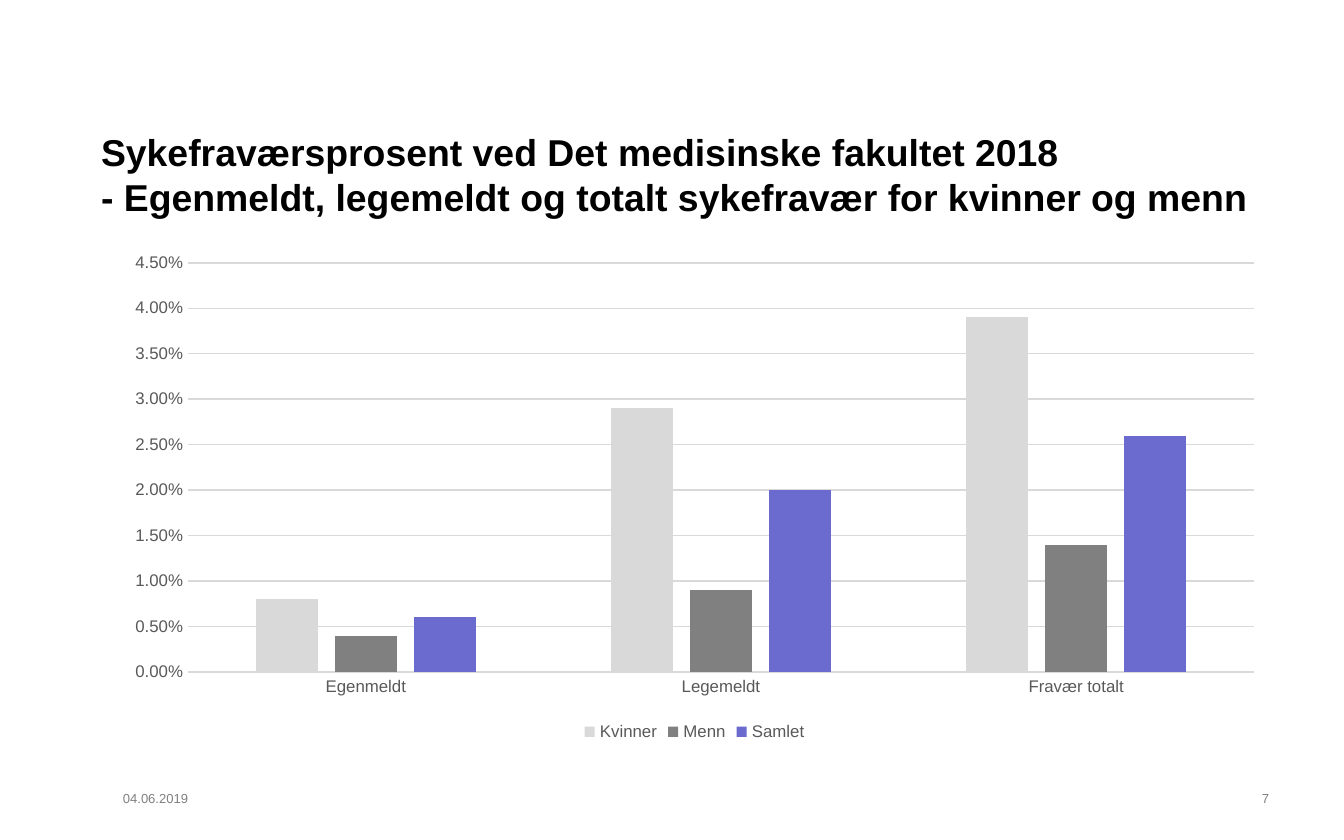
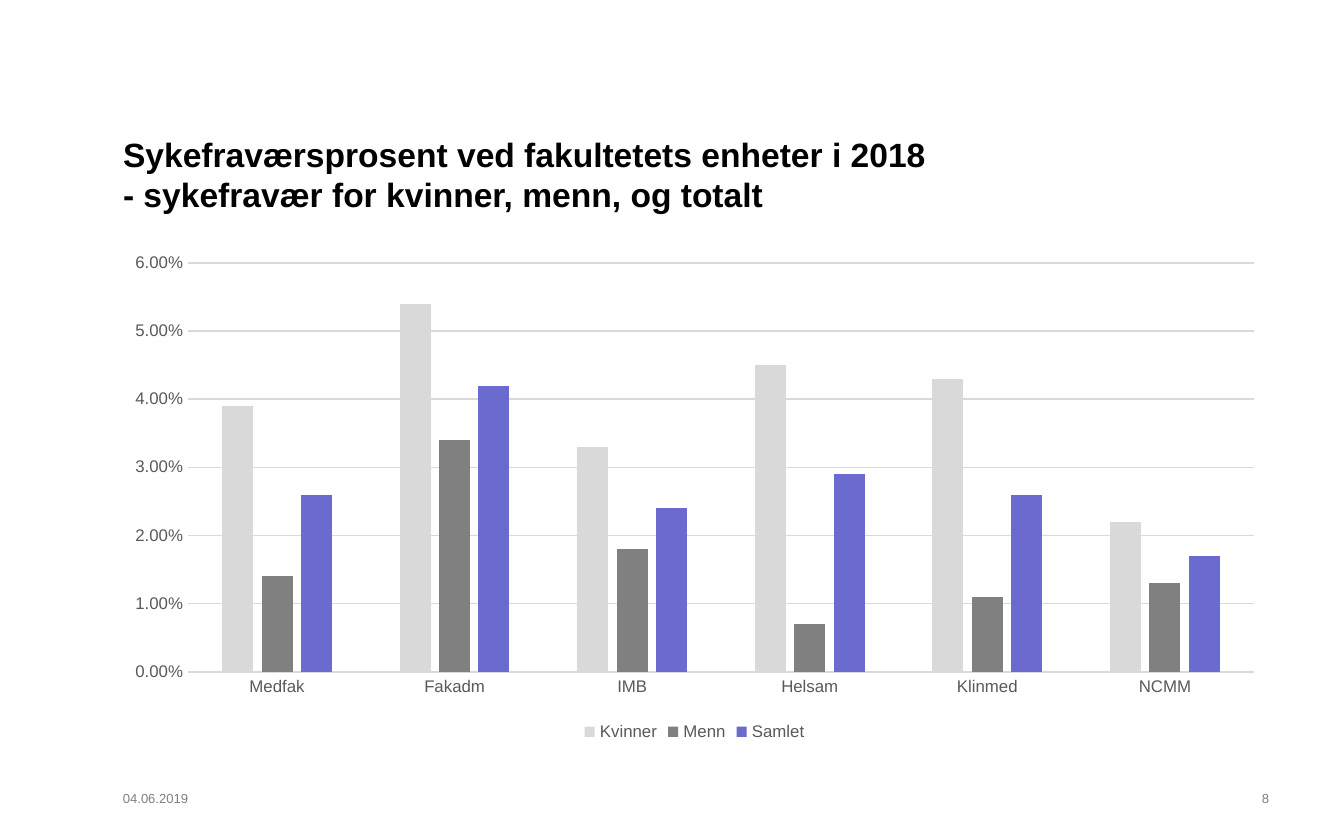
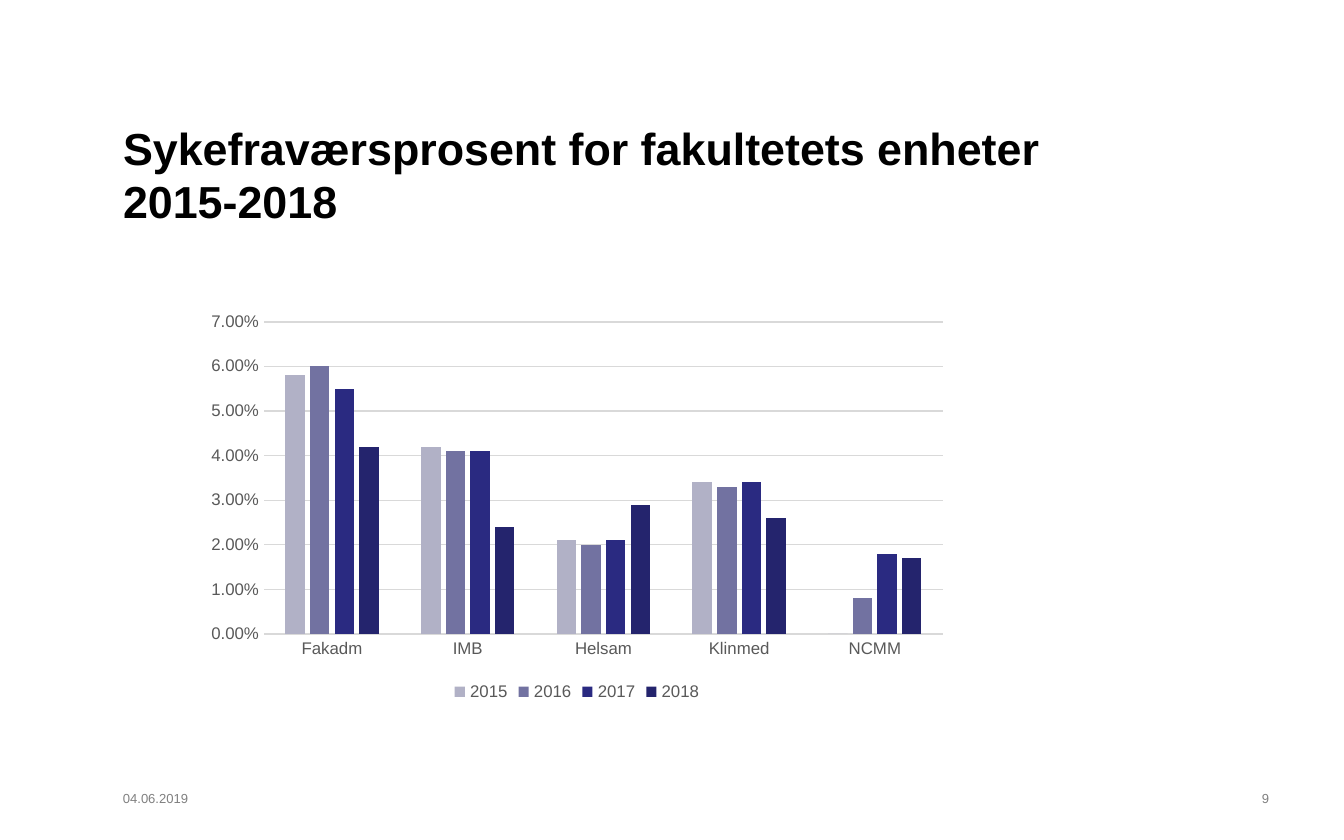
from dataclasses import dataclass

from pptx import Presentation
from pptx.chart.data import CategoryChartData
from pptx.dml.color import RGBColor
from pptx.enum.chart import XL_CHART_TYPE, XL_LEGEND_POSITION, XL_TICK_MARK
from pptx.enum.text import MSO_ANCHOR, MSO_AUTO_SIZE, PP_ALIGN
from pptx.util import Emu, Inches, Pt

PAGE_WIDTH, PAGE_HEIGHT = 1344, 840
TITLE_ONLY = 5
DATE = "04.06.2019"
FIRST_PAGE_NUMBER = 7


@dataclass(frozen=True)
class Theme:
    """Colours, font and type sizes shared by all pages."""
    font: str = "Arial"
    title: str = "000000"
    footer: str = "808080"
    label: str = "595959"
    rule: str = "D9D9D9"
    gender_colors: tuple = ("D9D9D9", "808080", "6B6BCF")
    year_colors: tuple = ("B1B1C6", "7272A1", "2A2A81", "24246D")
    footer_size: int = 7
    label_size: int = 9
    chart_size: int = 10
    rule_width: float = 0.75


@dataclass(frozen=True)
class Box:
    """A rectangle in px."""
    left: int
    top: int
    width: int
    height: int

    def emu(self):
        """Return the four lengths in EMU."""
        return [px(n) for n in (self.left, self.top, self.width, self.height)]


@dataclass(frozen=True)
class ChartPage:
    """The content of one page with a title and a column chart."""
    title: str
    title_size: int
    title_box: Box
    chart_box: Box
    categories: tuple
    series: dict
    colors: tuple
    maximum: float
    step: float


THEME = Theme()
TITLE_BOX = Box(112, 104, 1164, 140)
WIDE_TITLE_BOX = Box(90, 104, 1187, 140)
CHART_BOX = Box(112, 243, 1165, 504)
SMALL_CHART_BOX = Box(196, 304, 762, 403)
DATE_BOX = Box(112, 784, 280, 56)
NUMBER_BOX = Box(1179, 784, 101, 56)

PAGES = (
    ChartPage(
        "Sykefraværsprosent ved Det medisinske fakultet 2018\v"
        "- Egenmeldt, legemeldt og totalt sykefravær for kvinner og menn",
        20, WIDE_TITLE_BOX, CHART_BOX,
        ("Egenmeldt", "Legemeldt", "Fravær totalt"),
        {
            "Kvinner": (0.008, 0.029, 0.039),
            "Menn": (0.004, 0.009, 0.014),
            "Samlet": (0.006, 0.02, 0.026),
        },
        THEME.gender_colors, 0.045, 0.005,
    ),
    ChartPage(
        "Sykefraværsprosent ved fakultetets enheter i 2018\v"
        "- sykefravær for kvinner, menn, og totalt",
        18, TITLE_BOX, CHART_BOX,
        ("Medfak", "Fakadm", "IMB", "Helsam", "Klinmed", "NCMM"),
        {
            "Kvinner": (0.039, 0.054, 0.033, 0.045, 0.043, 0.022),
            "Menn": (0.014, 0.034, 0.018, 0.007, 0.011, 0.013),
            "Samlet": (0.026, 0.042, 0.024, 0.029, 0.026, 0.017),
        },
        THEME.gender_colors, 0.06, 0.01,
    ),
    ChartPage(
        "Sykefraværsprosent for fakultetets enheter \v2015-2018",
        24, TITLE_BOX, SMALL_CHART_BOX,
        ("Fakadm", "IMB", "Helsam", "Klinmed", "NCMM"),
        {
            "2015": (0.058, 0.042, 0.021, 0.034, 0),
            "2016": (0.06, 0.041, 0.02, 0.033, 0.008),
            "2017": (0.055, 0.041, 0.021, 0.034, 0.018),
            "2018": (0.042, 0.024, 0.029, 0.026, 0.017),
        },
        THEME.year_colors, 0.07, 0.01,
    ),
)


def px(length):
    """Turn px into EMU."""
    return Emu(round(length * Inches(10) / PAGE_WIDTH))


def style_font(font, size, color, bold=False):
    """Give a font the theme typeface, a size and a colour."""
    font.name = THEME.font
    font.size = Pt(size)
    font.bold = bold
    font.color.rgb = RGBColor.from_string(color)


def style_line(line):
    """Draw a line as a thin grey rule."""
    line.color.rgb = RGBColor.from_string(THEME.rule)
    line.width = Pt(THEME.rule_width)


def place_text(shape, box, text, size, color, align=PP_ALIGN.LEFT,
               anchor=MSO_ANCHOR.TOP, bold=False):
    """Place a text shape in its box and format its single paragraph."""
    shape.left, shape.top, shape.width, shape.height = box.emu()
    frame = shape.text_frame
    frame.word_wrap = True
    frame.auto_size = MSO_AUTO_SIZE.NONE
    frame.vertical_anchor = anchor
    frame.margin_left = frame.margin_right = px(11)
    frame.margin_top = frame.margin_bottom = px(6)
    para = frame.paragraphs[0]
    para.text = text
    para.alignment = align
    for span in para.runs:
        style_font(span.font, size, color, bold)


def add_footer(page, number):
    """Add the date and the page number."""
    parts = ((DATE_BOX, DATE, PP_ALIGN.LEFT),
             (NUMBER_BOX, str(number), PP_ALIGN.RIGHT))
    for box, text, align in parts:
        shape = page.shapes.add_textbox(*box.emu())
        place_text(shape, box, text, THEME.footer_size, THEME.footer, align)


def style_axes(chart, maximum, step):
    """Format the category axis, the value axis and its gridlines."""
    for axis in (chart.category_axis, chart.value_axis):
        axis.major_tick_mark = axis.minor_tick_mark = XL_TICK_MARK.NONE
        style_font(axis.tick_labels.font, THEME.label_size, THEME.label)
    style_line(chart.category_axis.format.line)
    values = chart.value_axis
    values.format.line.fill.background()
    values.minimum_scale = 0
    values.maximum_scale = maximum
    values.major_unit = step
    values.tick_labels.number_format = "0.00%"
    values.tick_labels.number_format_is_linked = False
    style_line(values.major_gridlines.format.line)


def add_column_chart(page, content):
    """Add the clustered column chart with its legend below."""
    data = CategoryChartData(number_format="0.00%")
    data.categories = content.categories
    for name, values in content.series.items():
        data.add_series(name, values)
    chart = page.shapes.add_chart(
        XL_CHART_TYPE.COLUMN_CLUSTERED, *content.chart_box.emu(), data).chart
    style_font(chart.font, THEME.chart_size, THEME.title)
    chart.has_title = False
    chart.has_legend = True
    chart.legend.position = XL_LEGEND_POSITION.BOTTOM
    chart.legend.include_in_layout = False
    style_font(chart.legend.font, THEME.label_size, THEME.label)
    style_axes(chart, content.maximum, content.step)
    plot = chart.plots[0]
    plot.vary_by_categories = False
    plot.gap_width = 219
    plot.overlap = -27
    for series, color in zip(plot.series, content.colors):
        series.format.fill.solid()
        series.format.fill.fore_color.rgb = RGBColor.from_string(color)
        series.invert_if_negative = False


def add_chart_page(deck, content, number):
    """Add one page with a title, a footer and a chart."""
    page = deck.slides.add_slide(deck.slide_layouts[TITLE_ONLY])
    place_text(page.shapes.title, content.title_box, content.title,
               content.title_size, THEME.title,
               anchor=MSO_ANCHOR.MIDDLE, bold=True)
    add_footer(page, number)
    add_column_chart(page, content)


def main():
    """Build and save the deck."""
    deck = Presentation()
    deck.slide_width = px(PAGE_WIDTH)
    deck.slide_height = px(PAGE_HEIGHT)
    for number, content in enumerate(PAGES, FIRST_PAGE_NUMBER):
        add_chart_page(deck, content, number)
    deck.save("out.pptx")


if __name__ == "__main__":
    main()
